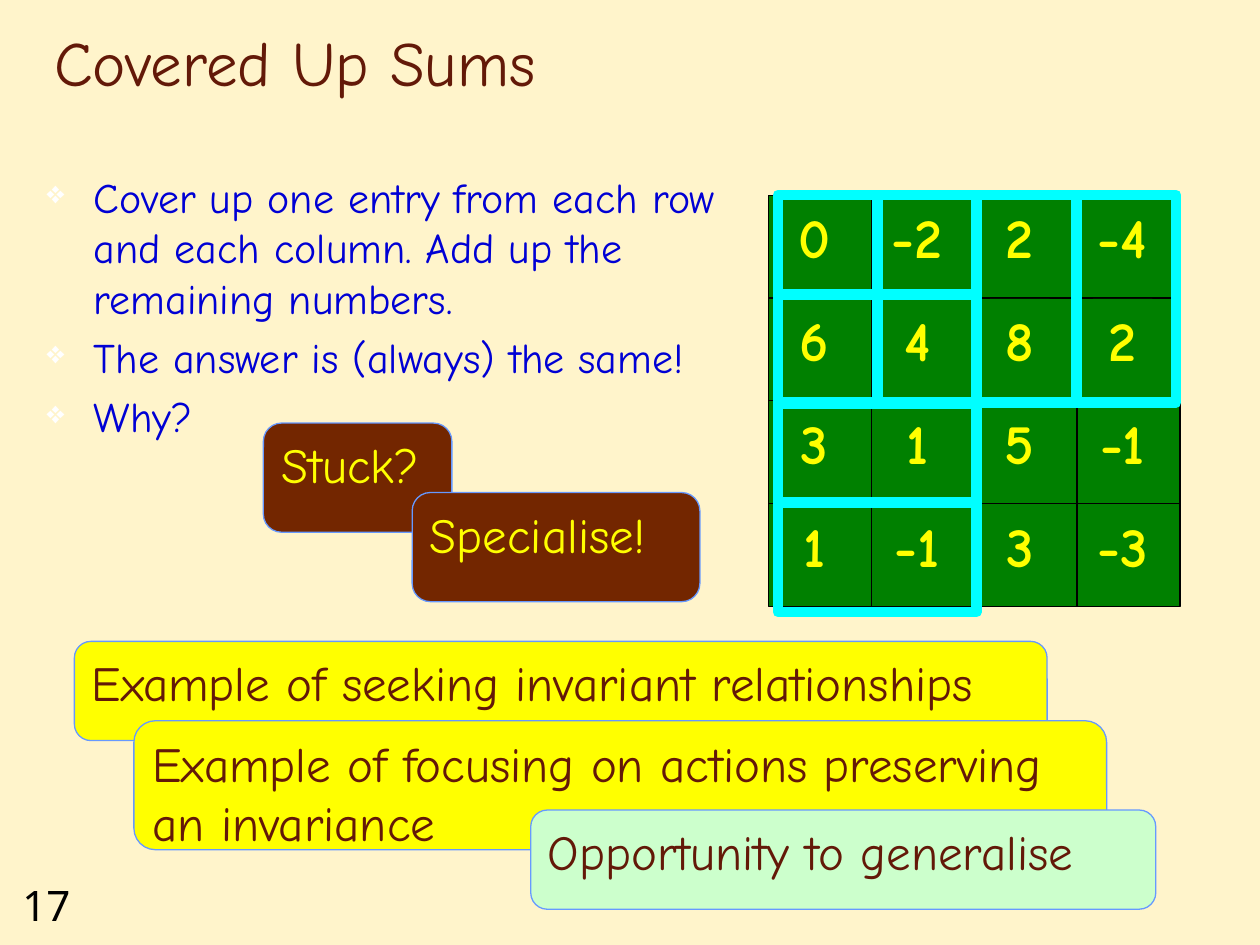
from lxml import etree
from pptx import Presentation
from pptx.dml.color import RGBColor
from pptx.enum.shapes import MSO_SHAPE
from pptx.enum.text import MSO_ANCHOR, MSO_AUTO_SIZE, PP_ALIGN
from pptx.oxml.ns import qn
from pptx.util import Cm, Pt

RECTANGLE = MSO_SHAPE.RECTANGLE
ROUNDED = MSO_SHAPE.ROUNDED_RECTANGLE
TOP, MIDDLE, BOTTOM = MSO_ANCHOR.TOP, MSO_ANCHOR.MIDDLE, MSO_ANCHOR.BOTTOM
LEFT, CENTER = PP_ALIGN.LEFT, PP_ALIGN.CENTER
NO_AUTOFIT = MSO_AUTO_SIZE.NONE
TITLE_ONLY_LAYOUT = 5

FONT = "Comic Neue"
MAROON, BROWN, YELLOW = "631908", "732600", "FFFF00"
GREEN, CYAN, BLUE, BLACK = "008000", "00FFFF", "0000D4", "000000"
MINT, OUTLINE, CREAM, WHITE = "CCFFCC", "6699FF", "FFF2C0", "FFFFFF"

NUMBERS = [
    ["0", "-2", "2", "-4"],
    ["6", "4", "8", "2"],
    ["3", "1", "5", "-1"],
    ["1", "-1", "3", "-3"],
]
GRID_LEFT, GRID_TOP, CELL_SIZE, CELL_PITCH = 15.5, 3.94, 2.08, 2.07
NUMBER_HEIGHT = 1.63
FRAME_WIDTH, FRAME_HEIGHT = 4.01, 4.19
FRAME_CORNERS = [(15.68, 3.93), (15.68, 5.94), (15.68, 8.15),
                 (17.69, 3.93), (19.7, 3.93)]

INSTRUCTIONS = [
    "Cover up one entry from each row and each column. "
    "Add up the remaining numbers.",
    "The answer is (always) the same!",
    "Why?",
]
# text, left, top, width, height, fill, text colour
CALLOUTS = [
    ("Example of seeking invariant relationships",
     1.5, 12.93, 19.61, 2.0, YELLOW, MAROON),
    ("Example of focusing on actions preserving an invariance",
     2.7, 14.53, 19.61, 2.6, YELLOW, MAROON),
    ("Opportunity to generalise", 10.7, 16.33, 12.6, 2.0, MINT, MAROON),
    ("Stuck?", 5.31, 8.53, 3.8, 2.2, BROWN, YELLOW),
    ("Specialise!", 8.31, 9.93, 5.8, 2.2, BROWN, YELLOW),
]


def color(hex_string):
    return RGBColor.from_string(hex_string)


def format_paragraph(paragraph, size, text_color, font=FONT, align=LEFT, bold=False):
    paragraph.alignment = align
    paragraph.font.name = font
    paragraph.font.size = Pt(size)
    paragraph.font.bold = bold
    paragraph.font.color.rgb = color(text_color)


def set_background(slide, hex_string, opacity):
    fill = slide.background.fill
    fill.solid()
    fill.fore_color.rgb = color(hex_string)
    for element in slide.background._cSld.bg.iter(qn("a:srgbClr")):
        etree.SubElement(element, qn("a:alpha"), val=str(opacity * 1000))


def add_bullet(paragraph, character, hex_string, percent):
    properties = paragraph._p.get_or_add_pPr()
    properties.set("marL", str(Cm(0.95)))
    properties.set("indent", str(-Cm(0.95)))
    bullet_color = etree.SubElement(properties, qn("a:buClr"))
    etree.SubElement(bullet_color, qn("a:srgbClr"), val=hex_string)
    etree.SubElement(properties, qn("a:buSzPct"), val=str(percent * 1000))
    etree.SubElement(properties, qn("a:buChar"), char=character)
    # The schema wants the default run properties after the bullet.
    properties.append(properties.find(qn("a:defRPr")))


def add_box(slide, kind, left, top, width, height, fill=None, line=None, line_width=0.75):
    shape = slide.shapes.add_shape(kind, Cm(left), Cm(top), Cm(width), Cm(height))
    shape.shadow.inherit = False
    if fill:
        shape.fill.solid()
        shape.fill.fore_color.rgb = color(fill)
    else:
        shape.fill.background()
    if line:
        shape.line.color.rgb = color(line)
        shape.line.width = Pt(line_width)
    else:
        shape.line.fill.background()
    return shape


def add_title(slide, text):
    title = slide.shapes.title
    title.left, title.top, title.width, title.height = Cm(0.84), Cm(0.43), Cm(21.59), Cm(1.7)
    frame = title.text_frame
    frame.text = text
    frame.auto_size = NO_AUTOFIT
    frame.vertical_anchor = BOTTOM
    format_paragraph(frame.paragraphs[0], 36, MAROON)


def add_instructions(slide):
    box = slide.shapes.add_textbox(Cm(0.69), Cm(3.33), Cm(14.6), Cm(6.6))
    frame = box.text_frame
    frame.word_wrap = True
    frame.text = "\n".join(INSTRUCTIONS)
    for paragraph in frame.paragraphs:
        format_paragraph(paragraph, 24, BLUE)
        paragraph.space_before = Pt(5)
        add_bullet(paragraph, "❖", WHITE, 75)


def add_number(slide, text, center_x, center_y):
    width = 1.2 if len(text) == 1 else 1.7
    shape = add_box(slide, RECTANGLE, center_x - width / 2, center_y - NUMBER_HEIGHT / 2,
                    width, NUMBER_HEIGHT, GREEN)
    frame = shape.text_frame
    frame.word_wrap = False
    frame.vertical_anchor = MIDDLE
    frame.text = text
    format_paragraph(frame.paragraphs[0], 32, YELLOW, align=CENTER, bold=True)


def add_number_grid(slide):
    cells = [(text, column * CELL_PITCH, row * CELL_PITCH)
             for row, values in enumerate(NUMBERS)
             for column, text in enumerate(values)]
    for _, x, y in cells:
        add_box(slide, RECTANGLE, GRID_LEFT + x, GRID_TOP + y,
                CELL_SIZE, CELL_SIZE, GREEN, BLACK)
    for text, x, y in cells:
        add_number(slide, text, GRID_LEFT + 0.92 + x, GRID_TOP + 0.83 + y)
    for left, top in FRAME_CORNERS:
        add_box(slide, RECTANGLE, left, top, FRAME_WIDTH, FRAME_HEIGHT,
                line=CYAN, line_width=6)


def add_callout(slide, text, left, top, width, height, fill, text_color):
    shape = add_box(slide, ROUNDED, left, top, width, height, fill, OUTLINE)
    frame = shape.text_frame
    frame.word_wrap = True
    frame.vertical_anchor = TOP
    frame.text = text
    format_paragraph(frame.paragraphs[0], 28, text_color)


def add_page_number(slide, text):
    box = slide.shapes.add_textbox(Cm(0.2), Cm(17.6), Cm(1.9), Cm(1.27))
    box.text_frame.text = text
    format_paragraph(box.text_frame.paragraphs[0], 24, BLACK, font="Noto Sans")


def main():
    presentation = Presentation()
    presentation.slide_width, presentation.slide_height = Cm(25.4), Cm(19.05)
    slide = presentation.slides.add_slide(presentation.slide_layouts[TITLE_ONLY_LAYOUT])
    set_background(slide, CREAM, 82)
    add_page_number(slide, "17")
    add_title(slide, "Covered Up Sums")
    add_instructions(slide)
    add_number_grid(slide)
    for callout in CALLOUTS:
        add_callout(slide, *callout)
    presentation.save("out.pptx")


if __name__ == "__main__":
    main()
